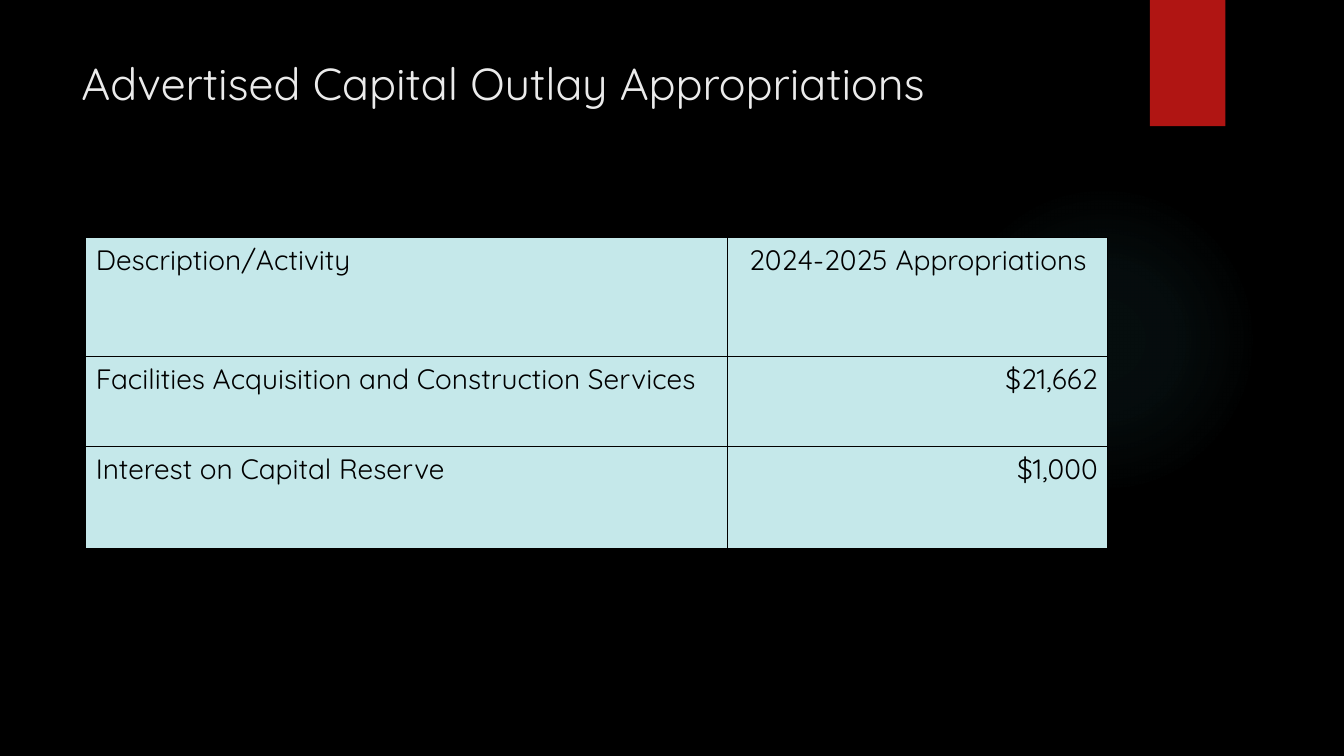
from dataclasses import dataclass

import pptx
import pptx.dml.color
import pptx.enum.shapes
import pptx.enum.text
import pptx.oxml
import pptx.oxml.ns
import pptx.util

Cm = pptx.util.Cm
Pt = pptx.util.Pt
RGB = pptx.dml.color.RGBColor
Align = pptx.enum.text.PP_ALIGN
Kind = pptx.enum.shapes.MSO_SHAPE

BLACK = RGB(0x00, 0x00, 0x00)
WHITE = RGB(0xEB, 0xEB, 0xEB)
RED = RGB(0xB0, 0x15, 0x13)
TEAL = RGB(0x50, 0xB9, 0xC1)
PALE = RGB(0xC5, 0xE8, 0xEA)
FONT = "Quicksand"
NS = pptx.oxml.ns.nsdecls("a")


@dataclass
class Row:
    label: str
    amount: str
    height: float
    align: Align = Align.RIGHT


COLS = (16.18, 9.58)
ROWS = (
    Row("Description/Activity", "2024-2025 Appropriations", 3, Align.CENTER),
    Row("Facilities Acquisition and Construction Services", "$21,662", 2.26),
    Row("Interest on Capital Reserve", "$1,000", 2.57),
)
GLOW = ((0, 7), (36, 6), (69, 0))  # position and opacity, in percent


def add_plain(slide, kind: Kind, left: float, top: float, width: float, height: float):
    """Add a preset shape with no line and no shadow."""
    shape = slide.shapes.add_shape(kind, Cm(left), Cm(top), Cm(width), Cm(height))
    shape.shadow.inherit = False
    shape.line.fill.background()
    return shape


def add_glow(slide) -> None:
    glow = add_plain(slide, Kind.OVAL, 23.9, 4.65, 7.82, 7.82)
    stops = "".join(
        f'<a:gs pos="{pos * 1000}"><a:srgbClr val="{TEAL}">'
        f'<a:alpha val="{alpha * 1000}"/></a:srgbClr></a:gs>'
        for pos, alpha in GLOW
    )
    fill = pptx.oxml.parse_xml(
        f'<a:gradFill {NS}><a:gsLst>{stops}</a:gsLst><a:path path="circle">'
        '<a:fillToRect l="50000" t="50000" r="50000" b="50000"/></a:path></a:gradFill>'
    )
    glow.fill.background()
    blank = glow.element.spPr.find(pptx.oxml.ns.qn("a:noFill"))
    glow.element.spPr.replace(blank, fill)


def add_text(frame, text: str, size: int, color: RGB, align: Align = Align.LEFT) -> None:
    para = frame.paragraphs[0]
    para.alignment = align
    run = para.add_run()
    run.text = text
    run.font.name = FONT
    run.font.size = Pt(size)
    run.font.color.rgb = color


def add_title(slide) -> None:
    box = slide.shapes.add_textbox(Cm(1.8), Cm(1.27), Cm(26.14), Cm(3.89))
    box.text_frame.word_wrap = True
    add_text(box.text_frame, "Advertised Capital Outlay Appropriations", 32, WHITE)


def set_cell(cell, text: str, align: Align) -> None:
    """Border, fill and write one cell."""
    props = cell._tc.get_or_add_tcPr()
    for side in "LRTB":
        props.append(pptx.oxml.parse_xml(
            f'<a:ln{side} {NS} w="{Pt(1)}"><a:solidFill>'
            f'<a:srgbClr val="{BLACK}"/></a:solidFill></a:ln{side}>'
        ))
    cell.fill.solid()
    cell.fill.fore_color.rgb = PALE
    add_text(cell.text_frame, text, 20, BLACK, align)


def add_grid(slide) -> None:
    height = sum(row.height for row in ROWS)
    table = slide.shapes.add_table(
        len(ROWS), len(COLS), Cm(2.16), Cm(5.99), Cm(sum(COLS)), Cm(height)
    ).table
    table.horz_banding = False
    for col, width in zip(table.columns, COLS):
        col.width = Cm(width)
    for i, row in enumerate(ROWS):
        table.rows[i].height = Cm(row.height)
        set_cell(table.cell(i, 0), row.label, Align.LEFT)
        set_cell(table.cell(i, 1), row.amount, row.align)


def main() -> None:
    deck = pptx.Presentation()
    deck.slide_width, deck.slide_height = Cm(33.87), Cm(19.05)
    slide = deck.slides.add_slide(deck.slide_layouts[6])
    slide.background.fill.solid()
    slide.background.fill.fore_color.rgb = BLACK
    add_glow(slide)
    ribbon = add_plain(slide, Kind.RECTANGLE, 28.98, 0, 1.9, 3.18)
    ribbon.fill.solid()
    ribbon.fill.fore_color.rgb = RED
    add_title(slide)
    add_grid(slide)
    deck.save("out.pptx")


if __name__ == "__main__":
    main()
